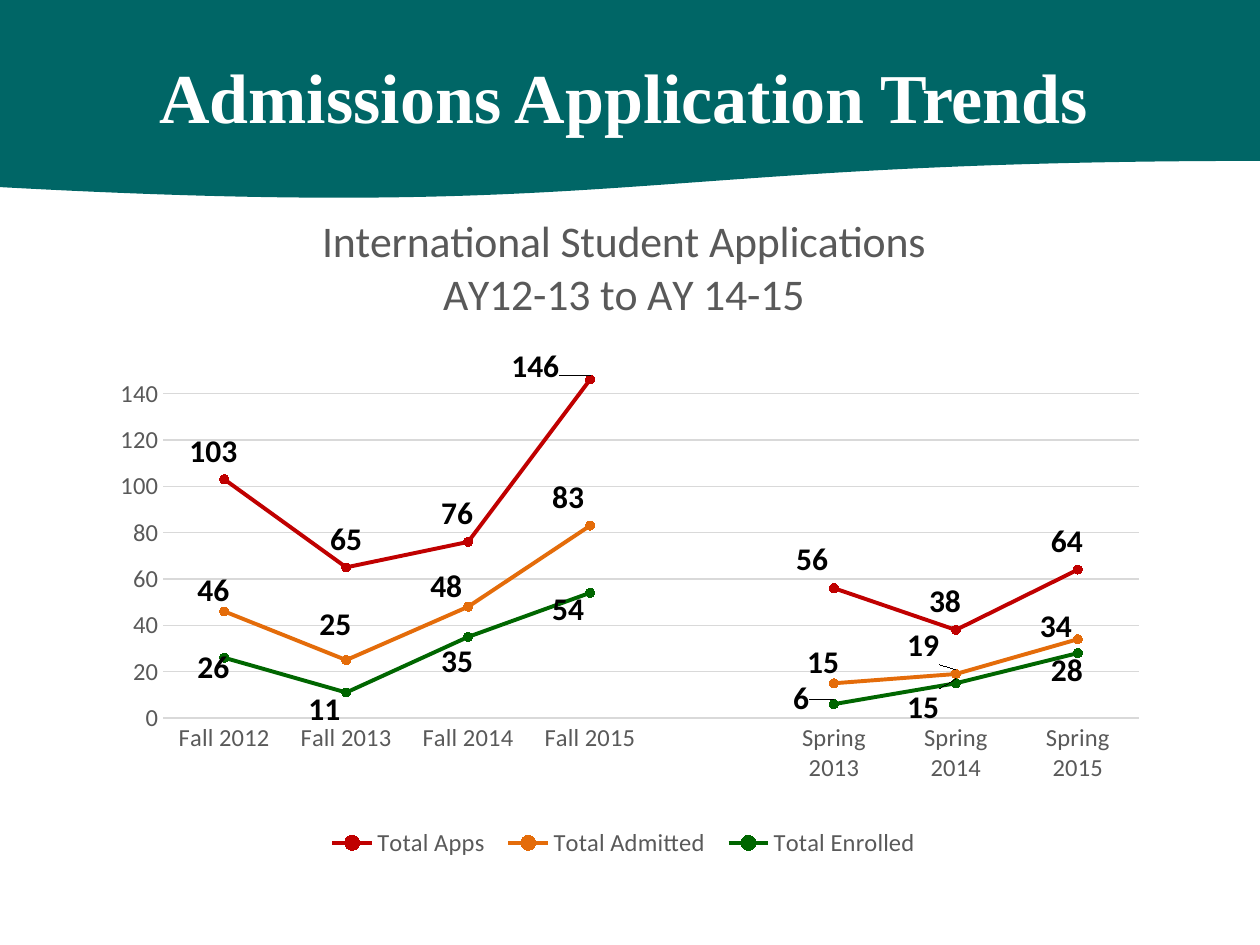
from pptx import Presentation
from pptx.chart.data import CategoryChartData
from pptx.dml.color import RGBColor
from pptx.enum.chart import (XL_CHART_TYPE as ChartType, XL_LABEL_POSITION as LabelPosition,
                             XL_LEGEND_POSITION as LegendPosition, XL_MARKER_STYLE as Marker,
                             XL_TICK_MARK as TickMark)
from pptx.enum.shapes import MSO_SHAPE as Preset
from pptx.enum.text import MSO_ANCHOR as Anchor, PP_ALIGN as Align
from pptx.oxml import parse_xml
from pptx.oxml.ns import nsdecls
from pptx.util import Inches, Pt

COLORS = {"teal": "006666", "white": "FFFFFF", "black": "000000", "gray": "595959",
          "grid": "D9D9D9", "red": "C00000", "orange": "E46C0A", "green": "006600"}
CATEGORIES = ["Fall 2012", "Fall 2013", "Fall 2014", "Fall 2015", "",
              "Spring 2013", "Spring 2014", "Spring 2015"]
# Name, color, values, and label shifts as shares of the chart's size
SERIES = [
    ("Total Apps", "red", [103, 65, 76, 146, None, 56, 38, 64],
     [(-.01, 0), (0, 0), (-.01, 0), (-.05, .02), None, (-.02, 0), (-.01, 0), (-.01, 0)]),
    ("Total Admitted", "orange", [46, 25, 48, 83, None, 15, 19, 34],
     [(-.01, .01), (-.01, -.01), (-.02, .01), (-.02, 0), None, (-.01, .01), (-.03, 0), (-.02, .02)]),
    ("Total Enrolled", "green", [26, 11, 35, 54, None, 6, 15, 28],
     [(-.01, .05), (-.02, .06), (-.01, .07), (-.02, .06), None, (-.03, .03), (-.03, .07), (-.01, .06)]),
]


def color(name):
    return RGBColor.from_string(COLORS[name])


def style_font(font, size, color_name, bold=False, name="Calibri"):
    font.size, font.bold, font.name = Pt(size), bold, name
    font.color.rgb = color(color_name)


def style_line(line, color_name, width):
    line.color.rgb = color(color_name)
    line.width = Pt(width)


def share(box, x, y, width, height):
    """Box inside another box, given as shares of its size."""
    left, top, full_width, full_height = box
    return (int(left + x * full_width), int(top + y * full_height),
            int(width * full_width), int(height * full_height))


def manual_layout(x, y, width=None, height=None, inner=False):
    """Chart layout: a box from the chart's edge, or a shift when no size is given."""
    parts = ['<c:layoutTarget val="inner"/>'] if inner else []
    if width is not None:
        parts.append('<c:xMode val="edge"/><c:yMode val="edge"/>')
    values = {"x": x, "y": y, "w": width, "h": height}
    parts += [f'<c:{key} val="{value}"/>' for key, value in values.items() if value is not None]
    return parse_xml(f'<c:layout {nsdecls("c")}><c:manualLayout>{"".join(parts)}'
                     '</c:manualLayout></c:layout>')


def add_header(slide, box):
    # Wavy band
    band = slide.shapes.add_shape(Preset.FLOWCHART_DOCUMENT, *box)
    band.shadow.inherit = False
    band.fill.solid()
    band.fill.fore_color.rgb = color("teal")
    style_line(band.line, "teal", 2)
    # Heading
    text_frame = slide.shapes.add_textbox(*share(box, .03, .21, .93, .54)).text_frame
    text_frame.word_wrap = True
    text_frame.vertical_anchor = Anchor.MIDDLE
    text_frame.margin_left = text_frame.margin_right = Inches(.04)
    text_frame.margin_top = text_frame.margin_bottom = Inches(.04)
    text_frame.text = "Admissions Application Trends"
    paragraph = text_frame.paragraphs[0]
    paragraph.alignment = Align.CENTER
    paragraph.space_after = Pt(10)
    style_font(paragraph.runs[0].font, 40, "white", True, "Times New Roman")


def style_axes(chart):
    for axis in (chart.category_axis, chart.value_axis):
        axis.major_tick_mark = axis.minor_tick_mark = TickMark.NONE
        style_font(axis.tick_labels.font, 14, "gray")
    style_line(chart.category_axis.format.line, "grid", .75)
    values = chart.value_axis
    values.minimum_scale, values.maximum_scale, values.major_unit = 0, 150, 20
    values.format.line.fill.background()
    style_line(values.major_gridlines.format.line, "grid", .75)


def style_series(series, color_name, shifts):
    series.smooth = False
    style_line(series.format.line, color_name, 2.25)
    series.marker.style, series.marker.size = Marker.CIRCLE, 5
    series.marker.format.fill.solid()
    series.marker.format.fill.fore_color.rgb = color(color_name)
    style_line(series.marker.format.line, color_name, .75)
    # Value labels
    labels = series.data_labels
    labels.show_value, labels.position = True, LabelPosition.ABOVE
    style_font(labels.font, 18, "black", True)
    for index, shift in enumerate(shifts):
        if shift:
            label = series.points[index].data_label
            style_font(label.font, 18, "black", True)
            label.position = LabelPosition.ABOVE
            index_element = series._element.xpath(f'.//c:dLbl/c:idx[@val="{index}"]')[0]
            index_element.addnext(manual_layout(*shift))


def add_trend_chart(slide, box):
    data = CategoryChartData()
    data.categories = CATEGORIES
    for name, _, values, _ in SERIES:
        data.add_series(name, values)
    chart = slide.shapes.add_chart(ChartType.LINE_MARKERS, *box, data).chart
    style_font(chart.font, 10, "black")

    # Chart title
    title = chart.chart_title
    title.include_in_layout = False
    title.text_frame.text = "International Student Applications\nAY12-13 to AY 14-15"
    for paragraph in title.text_frame.paragraphs:
        style_font(paragraph.runs[0].font, 25, "gray")

    # Axes, lines and plot area
    style_axes(chart)
    plot = chart.plots[0]
    plot.vary_by_categories = False
    for series, (_, color_name, _, shifts) in zip(plot.series, SERIES):
        style_series(series, color_name, shifts)
    plot_area = chart._chartSpace.chart.plotArea
    for layout in plot_area.xpath("c:layout"):
        plot_area.remove(layout)
    plot_area.insert(0, manual_layout(.08, .24, .89, .46, inner=True))

    # Legend
    chart.has_legend = True
    legend = chart.legend
    legend.position = LegendPosition.BOTTOM
    legend.include_in_layout = False
    style_font(legend.font, 14, "gray")
    for layout in legend._element.xpath("c:layout"):
        legend._element.remove(layout)
    legend._element.xpath("c:legendPos")[0].addnext(manual_layout(.22, .84, .56, .05))


def main():
    presentation = Presentation()
    presentation.slide_width, presentation.slide_height = Inches(10), Inches(7.5)
    slide = presentation.slides.add_slide(presentation.slide_layouts[6])
    page = (0, 0, presentation.slide_width, presentation.slide_height)
    add_header(slide, share(page, 0, 0, 1, .21))
    add_trend_chart(slide, share(page, .06, .2, .87, .8))
    presentation.save("out.pptx")


if __name__ == "__main__":
    main()
